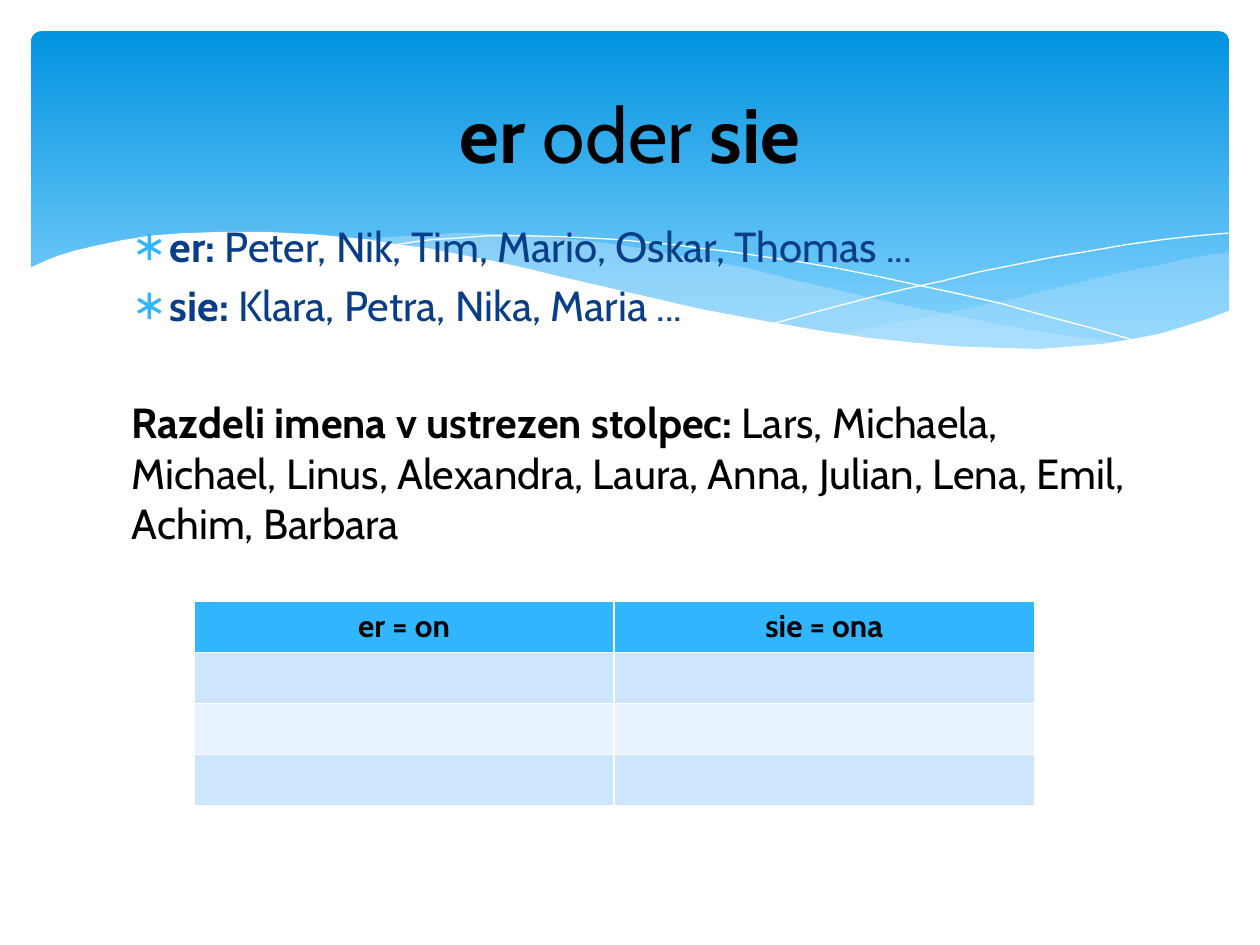
"""Build the slide on sorting names under er and sie."""
from lxml.etree import SubElement
from pptx import Presentation
from pptx.dml.color import RGBColor
from pptx.enum.shapes import MSO_SHAPE
from pptx.enum.text import MSO_ANCHOR, PP_ALIGN
from pptx.oxml.ns import qn
from pptx.util import Cm, Pt


def rgb(color):
    return RGBColor.from_string(color)


def add_text(p, text, size=24, color="000000", bold=False):
    r = p.add_run()
    r.text = text
    r.font.name = "Cabin"
    r.font.size = Pt(size)
    r.font.bold = bold
    r.font.color.rgb = rgb(color)


prs = Presentation()
prs.slide_width, prs.slide_height = Cm(25.4), Cm(19.05)
s = prs.slides.add_slide(prs.slide_layouts[5])

banner = s.shapes.add_shape(MSO_SHAPE.ROUNDED_RECTANGLE, Cm(0.63), Cm(0.63), Cm(24.15), Cm(6.86))
banner.adjustments[0] = 0.03
banner.shadow.inherit = False
banner.line.fill.background()
banner.fill.gradient()
banner.fill.gradient_angle = 270
for stop, position, color in zip(banner.fill.gradient_stops, (0, 0.9), ("0293E0", "83D3FE")):
    stop.position = position
    stop.color.rgb = rgb(color)

right_wave = [
    (976, 200), (948, 204), (921, 210), (891, 216), (861, 223), (832, 230), (805, 237),
    (779, 242), (753, 248), (729, 253), (706, 257), (683, 262), (661, 265), (691, 269),
    (719, 272), (745, 275), (769, 277), (803, 278), (824, 277), (854, 276), (881, 273),
    (905, 269), (928, 263), (949, 257), (963, 252), (976, 247)]
middle_wave = [
    (893, 273), (866, 269), (837, 265), (807, 260), (775, 254), (741, 247), (706, 240),
    (668, 231), (629, 222), (598, 214), (569, 208), (541, 203), (514, 198), (489, 194),
    (465, 191), (442, 189), (420, 187), (399, 186), (380, 185), (361, 185), (328, 187),
    (299, 189), (286, 191), (323, 196), (362, 203), (404, 211), (449, 222), (491, 232),
    (530, 240), (566, 248), (601, 255), (634, 261), (665, 266), (695, 270), (722, 274),
    (748, 276), (773, 277), (796, 278), (828, 278), (857, 277), (876, 275)]
falling_line = [
    (309, 195), (328, 192), (344, 190), (363, 189), (387, 187), (416, 187), (450, 188),
    (489, 190), (510, 192), (533, 194), (556, 197), (582, 200), (608, 204), (636, 208),
    (665, 213), (695, 219), (727, 226), (760, 233), (795, 241), (831, 251), (869, 261),
    (907, 272)]
rising_line = [
    (613, 257), (653, 246), (695, 235), (720, 229), (748, 223), (776, 216), (806, 210),
    (836, 204), (866, 199), (895, 194), (924, 190), (951, 187), (975, 185)]
front_wave = [
    (977, 246), (959, 253), (940, 259), (920, 265), (899, 269), (875, 273), (850, 275),
    (823, 277), (793, 276), (761, 275), (726, 272), (688, 268), (648, 262), (603, 254),
    (555, 245), (503, 233), (447, 220), (418, 213), (391, 207), (365, 202), (340, 197),
    (316, 194), (292, 190), (271, 188), (250, 186), (230, 185), (211, 184), (177, 184),
    (146, 185), (119, 187), (95, 191), (76, 195), (59, 199), (46, 203), (36, 207),
    (23, 213), (23, 329), (977, 329)]

for points, color, alpha in [
    (right_wave, "C6E7FC", 29),
    (middle_wave, "C6E7FC", 40),
    (falling_line, None, 100),
    (rising_line, None, 100),
    (front_wave, "FFFFFF", 100),
]:
    outline = s.shapes.build_freeform(*points[0], scale=Cm(2.54) / 100)
    outline.add_line_segments(points[1:], close=color is not None)
    sp = outline.convert_to_shape()
    sp.shadow.inherit = False
    if color:
        sp.fill.solid()
        sp.fill.fore_color.rgb = rgb(color)
        sp.line.fill.background()
        if alpha < 100:
            clr = sp.fill._xPr.find(qn("a:solidFill"))[0]
            SubElement(clr, qn("a:alpha")).set("val", str(alpha * 1000))
    else:
        sp.fill.background()
        sp.line.color.rgb = rgb("FFFFFF")
        sp.line.width = 0

body = s.shapes.add_textbox(Cm(2.41), Cm(4.32), Cm(20.57), Cm(12.7))
tf = body.text_frame
tf.word_wrap = True
for i, (label, names, color, bullet, gap) in enumerate([
    ("er: ", "Peter, Nik, Tim, Mario, Oskar, Thomas ...", "073E87", True, 4.8),
    ("sie: ", "Klara, Petra, Nika, Maria ...", "073E87", True, 4.8),
    ("Razdeli imena v ustrezen stolpec: ",
     "Lars, Michaela, Michael, Linus, Alexandra, Laura, Anna, Julian, Lena, Emil, Achim, Barbara",
     "000000", False, 38.4),
]):
    p = tf.add_paragraph() if i else tf.paragraphs[0]
    p.space_before = Pt(gap)
    if bullet:
        pPr = p._p.get_or_add_pPr()
        pPr.set("marL", str(Cm(0.76)))
        pPr.set("indent", str(-Cm(0.76)))
        SubElement(SubElement(pPr, qn("a:buClr")), qn("a:srgbClr")).set("val", "31B6FD")
        SubElement(pPr, qn("a:buFont")).set("typeface", "Cabin")
        SubElement(pPr, qn("a:buChar")).set("char", "∗")
    add_text(p, label, color=color, bold=True)
    add_text(p, names, color=color)

title = s.shapes.title
title.left, title.top, title.width, title.height = Cm(1.27), Cm(0.94), Cm(22.86), Cm(3.48)
title.text_frame.vertical_anchor = MSO_ANCHOR.MIDDLE
p = title.text_frame.paragraphs[0]
p.alignment = PP_ALIGN.CENTER
for text, bold in [("er ", True), ("oder ", False), ("sie", True)]:
    add_text(p, text, size=44, bold=bold)
s.shapes._spTree.append(title._element)

headings = ["er = on", "sie = ona"]
row_fills = ["31B6FD", "CEE5FE", "E8F3FF", "CEE5FE"]
table = s.shapes.add_table(4, 2, Cm(3.91), Cm(12.12), Cm(16.94), Cm(4.12)).table
for row, color in zip(table.rows, row_fills):
    for cell in row.cells:
        cell.fill.solid()
        cell.fill.fore_color.rgb = rgb(color)
for cell, heading in zip(table.rows[0].cells, headings):
    p = cell.text_frame.paragraphs[0]
    p.alignment = PP_ALIGN.CENTER
    add_text(p, heading, size=18, bold=True)

prs.save("out.pptx")
